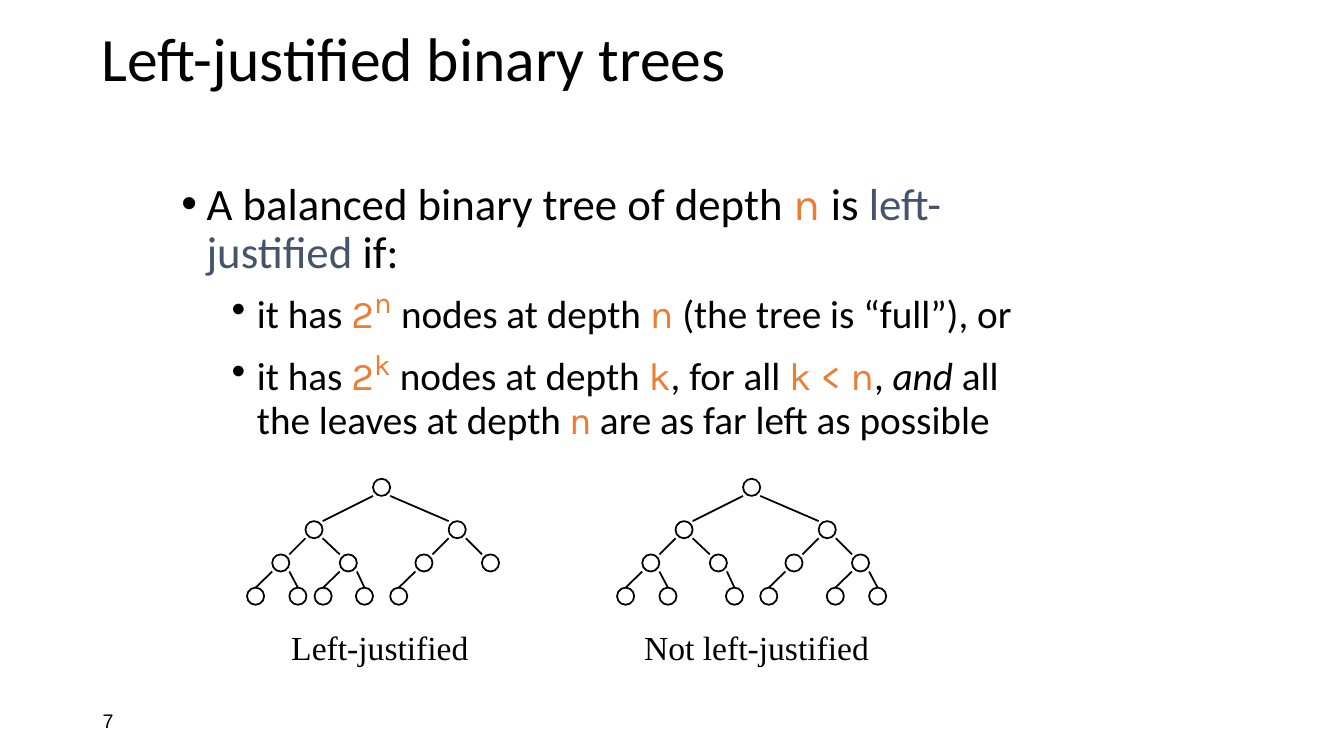
"""Builds a slide that compares left-justified and other binary trees."""
from lxml import etree
from pptx import Presentation
from pptx.dml.color import RGBColor
from pptx.enum import shapes, text
from pptx.oxml import ns
from pptx.util import Inches, Pt

BLACK = RGBColor(0x00, 0x00, 0x00)
ORANGE = RGBColor(0xED, 0x7D, 0x31)
SLATE = RGBColor(0x44, 0x54, 0x6A)

STYLES = {
    "number": ("Arial", 14, BLACK),
    "title": ("Calibri", 44, BLACK),
    "lead": ("Calibri", 32, BLACK),
    "lead code": ("Karla", 32, ORANGE),
    "term": ("Calibri", 32, SLATE),
    "body": ("Calibri", 28, BLACK),
    "italic": ("Calibri", 28, BLACK),
    "code": ("Karla", 28, ORANGE),
    "power": ("Karla", 36, ORANGE),
    "small code": ("DejaVu Sans", 24, ORANGE),
    "caption": ("Times New Roman", 24, BLACK),
}

BULLETS = [
    (0, 0, [("A balanced binary tree of depth ", "lead"), ("n", "lead code"),
            (" is ", "lead"), ("left-justified", "term"), (" if:", "lead")]),
    (1, 5, [("it has ", "body"), ("2", "code"), ("n", "power"), (" ", "code"),
            ("nodes at depth ", "body"), ("n", "code"),
            (" (the tree is “full”), or", "body")]),
    (1, 5, [("it has ", "body"), ("2", "code"), ("k", "power"), (" ", "code"),
            ("nodes at depth ", "body"), ("k", "code"), (", for all ", "body"),
            ("k < n", "code"), (", ", "body"), ("and", "italic"),
            (" all the leaves at depth ", "body"), ("n", "small code"),
            (" are as far left as possible", "body")]),
]

# Node numbers follow heap order: the children of i are 2i and 2i + 1.
NODE_X = {1: 1.25, 2: 0.58, 3: 2.0, 4: 0.25, 5: 0.92, 6: 1.67, 7: 2.33,
          8: 0, 9: 0.42, 10: 0.67, 11: 1.08, 12: 1.42, 14: 2.08, 15: 2.5}
LEVEL_Y = [4.75, 5.17, 5.5, 5.83]
NODE_SIZE = 0.17
TREES = [
    ("Left-justified", 2.45, 0.34, 2.08, [1, 2, 3, 4, 5, 6, 7, 8, 9, 10, 11, 12]),
    ("Not left-justified", 6.12, 0.17, 2.67,
     [1, 2, 3, 4, 5, 6, 7, 8, 9, 11, 12, 14, 15]),
]


def add_run(paragraph, words, style):
    run = paragraph.add_run()
    run.text = words
    name, size, color = STYLES[style]
    run.font.name = name
    run.font.size = Pt(size)
    run.font.color.rgb = color
    if style == "italic":
        run.font.italic = True
    if style == "power":
        run.font._element.set("baseline", "30000")


def add_text_box(parent, left, top, width, height, anchor=text.MSO_ANCHOR.TOP):
    box = parent.add_textbox(Inches(left), Inches(top), Inches(width), Inches(height))
    box.text_frame.word_wrap = True
    box.text_frame.vertical_anchor = anchor
    return box.text_frame


def add_bullet(paragraph, level):
    paragraph.level = level
    paragraph.line_spacing = 0.9
    properties = paragraph._p.get_or_add_pPr()
    properties.set("marL", str(Inches(0.25 + 0.5 * level)))
    properties.set("indent", str(Inches(-0.25)))
    etree.SubElement(properties, ns.qn("a:buFont")).set("typeface", "Arial")
    etree.SubElement(properties, ns.qn("a:buChar")).set("char", "•")


def node_corner(node, origin):
    return origin + NODE_X[node], LEVEL_Y[node.bit_length() - 1]


def add_node(group, node, origin):
    left, top = node_corner(node, origin)
    circle = group.shapes.add_shape(
        shapes.MSO_SHAPE.OVAL, Inches(left), Inches(top),
        Inches(NODE_SIZE), Inches(NODE_SIZE))
    circle.shadow.inherit = False
    circle.fill.background()
    circle.line.color.rgb = BLACK
    circle.line.width = Pt(1.25)


def add_edge(group, child, origin):
    child_left, child_top = node_corner(child, origin)
    parent_left, parent_top = node_corner(child // 2, origin)
    is_right = child % 2
    is_leaf_level = child.bit_length() == len(LEVEL_Y)
    child_share = 0.5 if is_leaf_level else 1 - is_right
    edge = group.shapes.add_connector(
        shapes.MSO_CONNECTOR.STRAIGHT,
        Inches(child_left + NODE_SIZE * child_share), Inches(child_top),
        Inches(parent_left + NODE_SIZE * is_right), Inches(parent_top + NODE_SIZE))
    edge.line.color.rgb = BLACK
    edge.line.width = Pt(1.25)
    etree.SubElement(edge._element.spPr, ns.qn("a:effectLst"))


def add_tree(slide, caption, origin, caption_offset, caption_width, nodes):
    group = slide.shapes.add_group_shape()
    frame = add_text_box(group.shapes, origin + caption_offset, 6.17, caption_width, 0.5)
    add_run(frame.paragraphs[0], caption, "caption")
    for node in nodes:
        add_node(group, node, origin)
        if node > 1:
            add_edge(group, node, origin)


def main():
    presentation = Presentation()
    presentation.slide_width = Inches(13.33)
    presentation.slide_height = Inches(7.5)
    slide = presentation.slides.add_slide(presentation.slide_layouts[6])

    number = add_text_box(slide.shapes, 0.92, 6.95, 3, 0.4, text.MSO_ANCHOR.MIDDLE)
    add_run(number.paragraphs[0], "7", "number")
    title = add_text_box(slide.shapes, 0.91, 0.23, 11.5, 0.77, text.MSO_ANCHOR.MIDDLE)
    title.paragraphs[0].line_spacing = 0.9
    add_run(title.paragraphs[0], "Left-justified binary trees", "title")

    body = add_text_box(slide.shapes, 1.7, 1.75, 8.75, 2.92)
    for index, (level, space_before, runs) in enumerate(BULLETS):
        paragraph = body.add_paragraph() if index else body.paragraphs[0]
        add_bullet(paragraph, level)
        if space_before:
            paragraph.space_before = Pt(space_before)
        for words, style in runs:
            add_run(paragraph, words, style)

    for tree in TREES:
        add_tree(slide, *tree)
    presentation.save("out.pptx")


if __name__ == "__main__":
    main()
